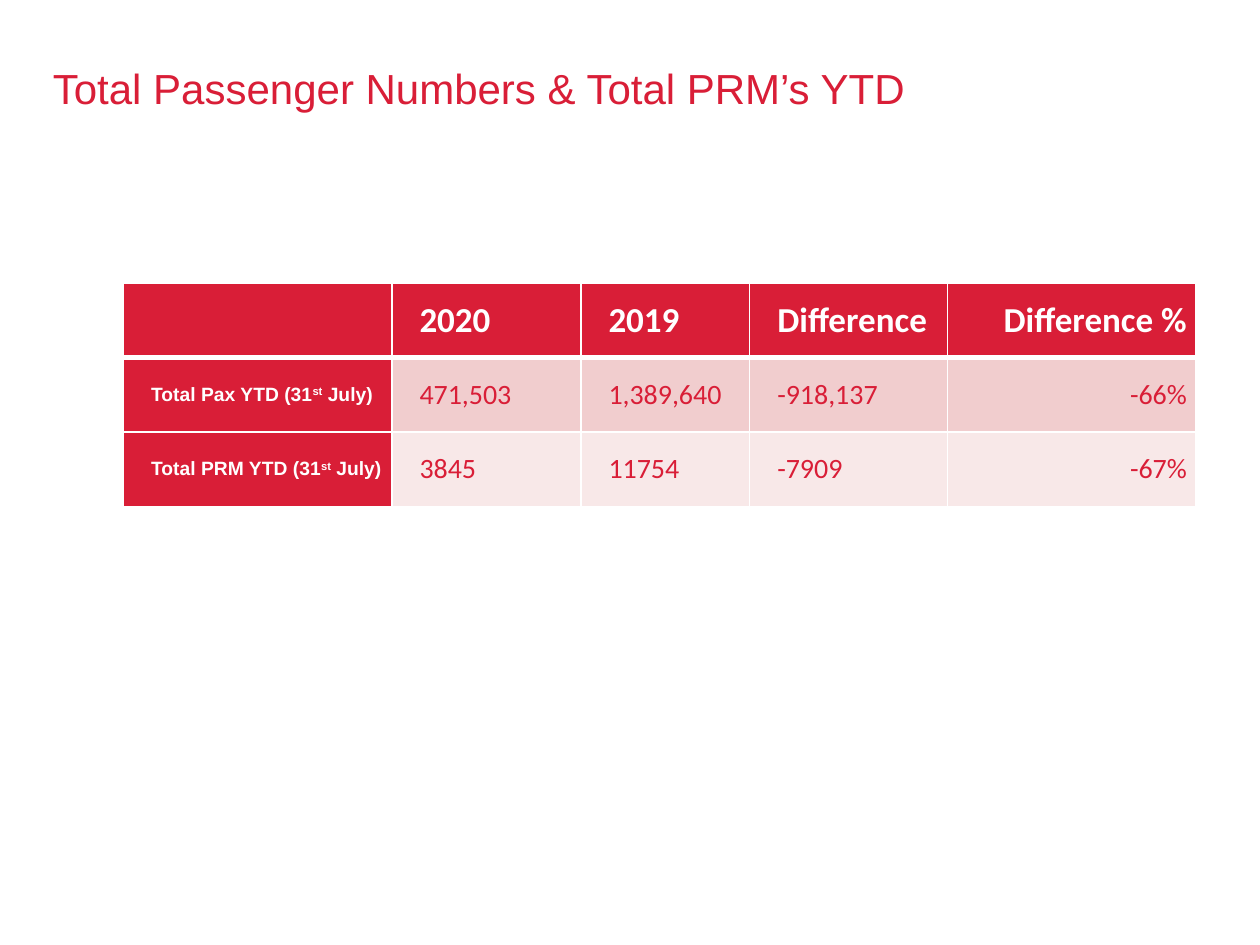
from lxml.etree import SubElement
from pptx import Presentation
from pptx.dml.color import RGBColor
from pptx.enum.text import MSO_ANCHOR, PP_ALIGN
from pptx.oxml.ns import qn
from pptx.util import Inches, Pt

TITLE = "Total Passenger Numbers & Total PRM’s YTD"
ROWS = [
    ["", "2020", "2019", "Difference", "Difference %"],
    ["Total Pax YTD (31^st^ July)", "471,503", "1,389,640", "-918,137", "-66%"],
    ["Total PRM YTD (31^st^ July)", "3845", "11754", "-7909", "-67%"],
]
WIDTHS = [2.13, 1.5, 1.34, 1.57, 1.97]
HEIGHT = 0.59
COLORS = {"red": "D91E37", "white": "FFFFFF", "rose": "F1CDCE", "pale": "F8E8E8"}
BANDS = ["red", "rose", "pale"]
STYLES = {
    "title": {"name": "Arial", "size": Pt(24), "bold": False, "color": "red"},
    "head": {"name": "Calibri", "size": Pt(20), "bold": True, "color": "white"},
    "label": {"name": "Arial", "size": Pt(11), "bold": True, "color": "white"},
    "value": {"name": "Calibri", "size": Pt(16), "bold": False, "color": "red"},
}
FRAME = {"margin_left": 0, "margin_right": 0, "margin_top": 0,
         "margin_bottom": 0, "word_wrap": True}
CELL = {"margin_left": Inches(0.07), "margin_right": Inches(0.07),
        "margin_top": 0, "margin_bottom": 0,
        "vertical_anchor": MSO_ANCHOR.MIDDLE}


def apply(item, values):
    for key, value in values.items():
        if key == "color":
            item.color.rgb = RGBColor.from_string(COLORS[value])
        else:
            setattr(item, key, value)


def write(para, text, style):
    for i, part in enumerate(text.split("^")):
        if part:
            run = para.add_run()
            run.text = part
            apply(run.font, STYLES[style])
            if i % 2:
                run.font._element.set("baseline", "30000")


def border(cell, sides):
    props = cell._tc.get_or_add_tcPr()
    for side, width in sides.items():
        line = SubElement(props, qn(f"a:ln{side}"), w=str(Pt(width)))
        fill = SubElement(line, qn("a:solidFill"))
        SubElement(fill, qn("a:srgbClr"), val=COLORS["white"])


deck = Presentation()
deck.slide_width, deck.slide_height = Inches(10), Inches(7.5)
slide = deck.slides.add_slide(deck.slide_layouts[6])

box = slide.shapes.add_textbox(Inches(0.42), Inches(0.5), Inches(9.17), Inches(1.17))
apply(box.text_frame, FRAME)
write(box.text_frame.paragraphs[0], TITLE, "title")

table = slide.shapes.add_table(
    len(ROWS), len(WIDTHS), Inches(0.98), Inches(2.25),
    Inches(sum(WIDTHS)), Inches(HEIGHT * len(ROWS))).table
for col, width in zip(table.columns, WIDTHS):
    col.width = Inches(width)

for r, row in enumerate(ROWS):
    table.rows[r].height = Inches(HEIGHT)
    for c, text in enumerate(row):
        cell = table.cell(r, c)
        apply(cell, CELL)
        border(cell, {"L": 1, "R": 1, "T": 3 if r == 1 else 1, "B": 3 if r == 0 else 1})
        cell.fill.solid()
        tint = "red" if c == 0 else BANDS[r]
        cell.fill.fore_color.rgb = RGBColor.from_string(COLORS[tint])
        para = cell.text_frame.paragraphs[0]
        para.alignment = PP_ALIGN.RIGHT if c == len(row) - 1 else PP_ALIGN.LEFT
        para._p.get_or_add_pPr().set("indent", str(Inches(0.15)))
        write(para, text, "head" if r == 0 else "label" if c == 0 else "value")

deck.save("out.pptx")
